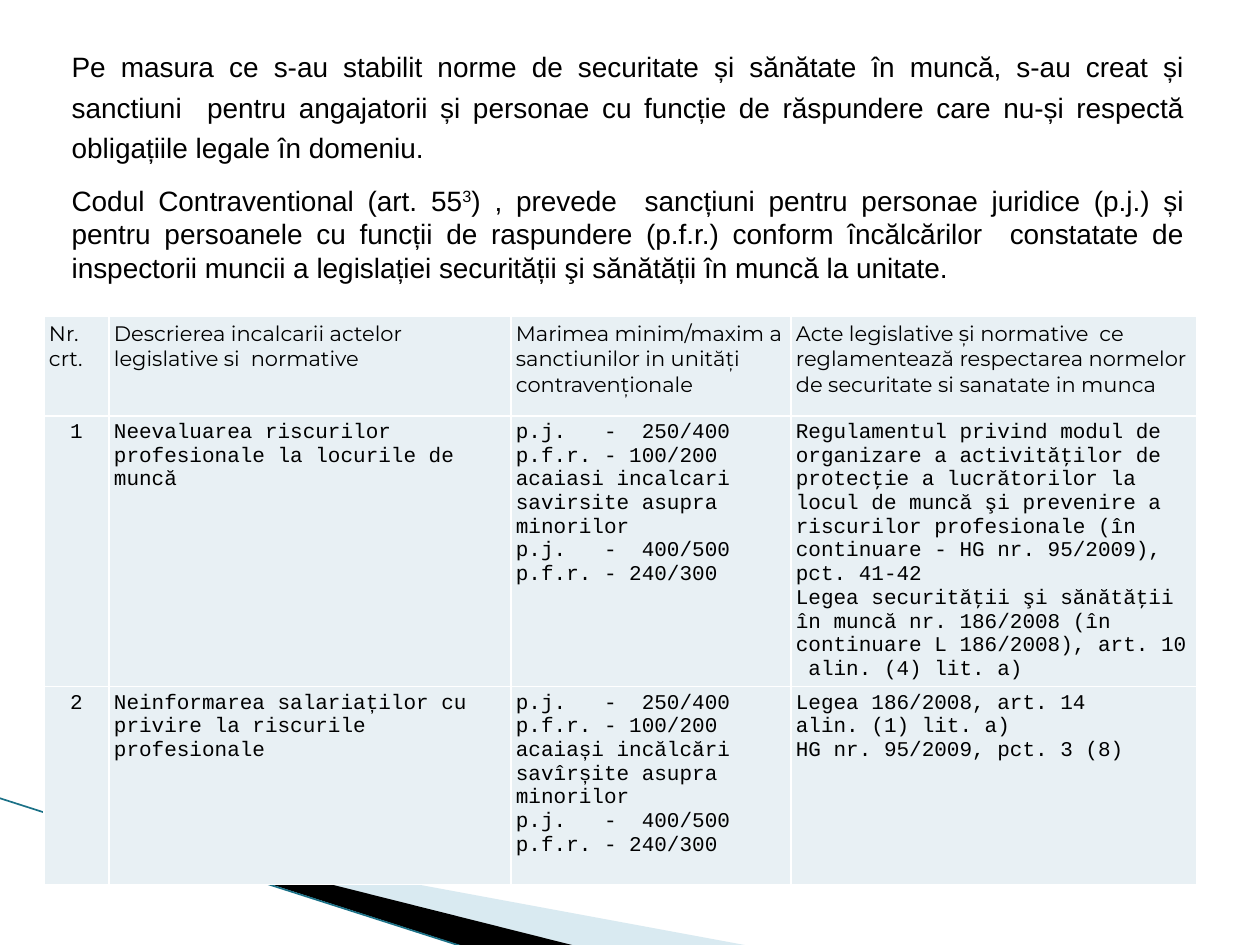
from pptx import Presentation
from pptx.dml.color import RGBColor
from pptx.enum.shapes import MSO_CONNECTOR
from pptx.enum.text import MSO_ANCHOR, MSO_AUTO_SIZE, PP_ALIGN
from pptx.oxml.ns import qn
from pptx.util import Pt
from lxml.etree import SubElement

PX = 914400 / 126
COLORS = {"text": "000000", "cell": "E8F0F4", "border": "FFFFFF",
          "pale": "A0CBDC", "black": "000000", "line": "1B7187"}


def px(n):
    return round(n * PX)


def rgb(name):
    return RGBColor.from_string(COLORS[name])


prs = Presentation()
prs.slide_width, prs.slide_height = px(1260), px(945)
s = prs.slides.add_slide(prs.slide_layouts[1])
title = s.shapes.title
title.element.getparent().remove(title.element)

# Corner wedges
wedges = [("pale", 40, [(69, 820), (750, 946), (575, 946), (69, 819)]),
          ("black", 100, [(67, 818), (576, 946), (469, 948), (68, 819)])]
for color, opacity, points in wedges:
    fb = s.shapes.build_freeform(*points[0], scale=PX)
    fb.add_line_segments(points[1:], close=True)
    sp = fb.convert_to_shape()
    sp.shadow.inherit = False
    sp.fill.solid()
    sp.fill.fore_color.rgb = rgb(color)
    sp.line.fill.background()
    if opacity < 100:
        clr = sp.element.spPr.find(qn("a:solidFill"))[0]
        SubElement(clr, qn("a:alpha")).set("val", str(opacity * 1000))

# Diagonal line
line = s.shapes.add_connector(MSO_CONNECTOR.STRAIGHT, px(-1), px(798), px(467), px(948))
line.line.color.rgb = rgb("line")
line.line.width = Pt(0.95)
SubElement(line.element.spPr, qn("a:effectLst"))

# Introductory text: each paragraph is a list of (text, is superscript)
body = s.placeholders[1]
body.left, body.top, body.width, body.height = px(44), px(37), px(1153), px(791)
tf = body.text_frame
tf.word_wrap = True
tf.auto_size = MSO_AUTO_SIZE.NONE
tf.vertical_anchor = MSO_ANCHOR.TOP
intro = [
    [("Pe masura ce s-au stabilit norme de securitate și sănătate în muncă, s-au creat și "
      "sanctiuni  pentru angajatorii și personae cu funcție de răspundere care nu-și respectă "
      "obligațiile legale în domeniu. ", False)],
    [("Codul Contraventional (art. 55", False), ("3", True),
     (") , prevede  sancțiuni pentru personae juridice (p.j.) și pentru persoanele cu funcții "
      "de raspundere (p.f.r.) conform încălcărilor  constatate de inspectorii muncii a "
      "legislației securității şi sănătății în muncă la unitate.", False)],
]
for i, parts in enumerate(intro):
    p = tf.add_paragraph() if i else tf.paragraphs[0]
    p.alignment = PP_ALIGN.JUSTIFY
    p.line_spacing = 1.0 if i else 1.2
    p.space_before = Pt(4 if i else 0)
    p.space_after = Pt(0 if i else 7)
    pPr = p._p.get_or_add_pPr()
    pPr.set("marL", str(px(15)))
    pPr.set("indent", "0")
    SubElement(pPr, qn("a:buNone"))
    for text, raised in parts:
        r = p.add_run()
        r.text = text
        r.font.name, r.font.size = "Arial", Pt(16)
        r.font.color.rgb = rgb("text")
        if raised:
            r.font._element.set("baseline", "30000")

# Table of sanctions
FINES = "p.j.   -  250/400\np.f.r. - 100/200\n{}\np.j.   -  400/500\np.f.r. - 240/300"
rows = [
    ["Nr. crt.", "Descrierea incalcarii actelor legislative si  normative",
     "Marimea minim/maxim a sanctiunilor in unități contravenționale",
     "Acte legislative și normative  ce reglamentează respectarea normelor de securitate "
     "si sanatate in munca"],
    ["1", "Neevaluarea riscurilor profesionale la locurile de muncă",
     FINES.format("acaiasi incalcari savirsite asupra minorilor"),
     "Regulamentul privind modul de organizare a activităţilor de protecţie a lucrătorilor la "
     "locul de muncă şi prevenire a riscurilor profesionale (în continuare - HG nr. 95/2009), "
     "pct. 41-42\n"
     "Legea securităţii şi sănătăţii în muncă nr. 186/2008 (în continuare L 186/2008), "
     "art. 10  alin. (4) lit. a)"],
    ["2", "Neinformarea salariaților cu privire la riscurile profesionale",
     FINES.format("acaiași incălcări savîrșite asupra minorilor"),
     "Legea 186/2008, art. 14 \valin. (1) lit. a)\nHG nr. 95/2009, pct. 3 (8)"],
]
widths, heights = [65, 402, 280, 406], [100, 270, 198]
table = s.shapes.add_table(len(rows), len(widths), px(44), px(316),
                           px(sum(widths)), px(sum(heights))).table
table.first_row = table.horz_banding = False
for col, width in zip(table.columns, widths):
    col.width = px(width)
for i, (row, height) in enumerate(zip(rows, heights)):
    table.rows[i].height = px(height)
    for j, text in enumerate(row):
        cell = table.cell(i, j)
        cell.margin_left = cell.margin_right = px(5)
        cell.margin_top = cell.margin_bottom = px(5)
        tcPr = cell._tc.get_or_add_tcPr()
        for side in ("lnL", "lnR", "lnT", "lnB"):
            ln = SubElement(tcPr, qn("a:" + side), w=str(Pt(1)))
            SubElement(SubElement(ln, qn("a:solidFill")), qn("a:srgbClr"), val=COLORS["border"])
        cell.fill.solid()
        cell.fill.fore_color.rgb = rgb("cell")
        cell.text_frame.text = text
        for p in cell.text_frame.paragraphs:
            p.alignment = PP_ALIGN.CENTER if i and j == 0 else PP_ALIGN.LEFT
            for r in p.runs:
                r.font.name = "Courier New" if i else "Montserrat"
                r.font.size = Pt(12)
                r.font.color.rgb = rgb("text")

prs.save("out.pptx")
